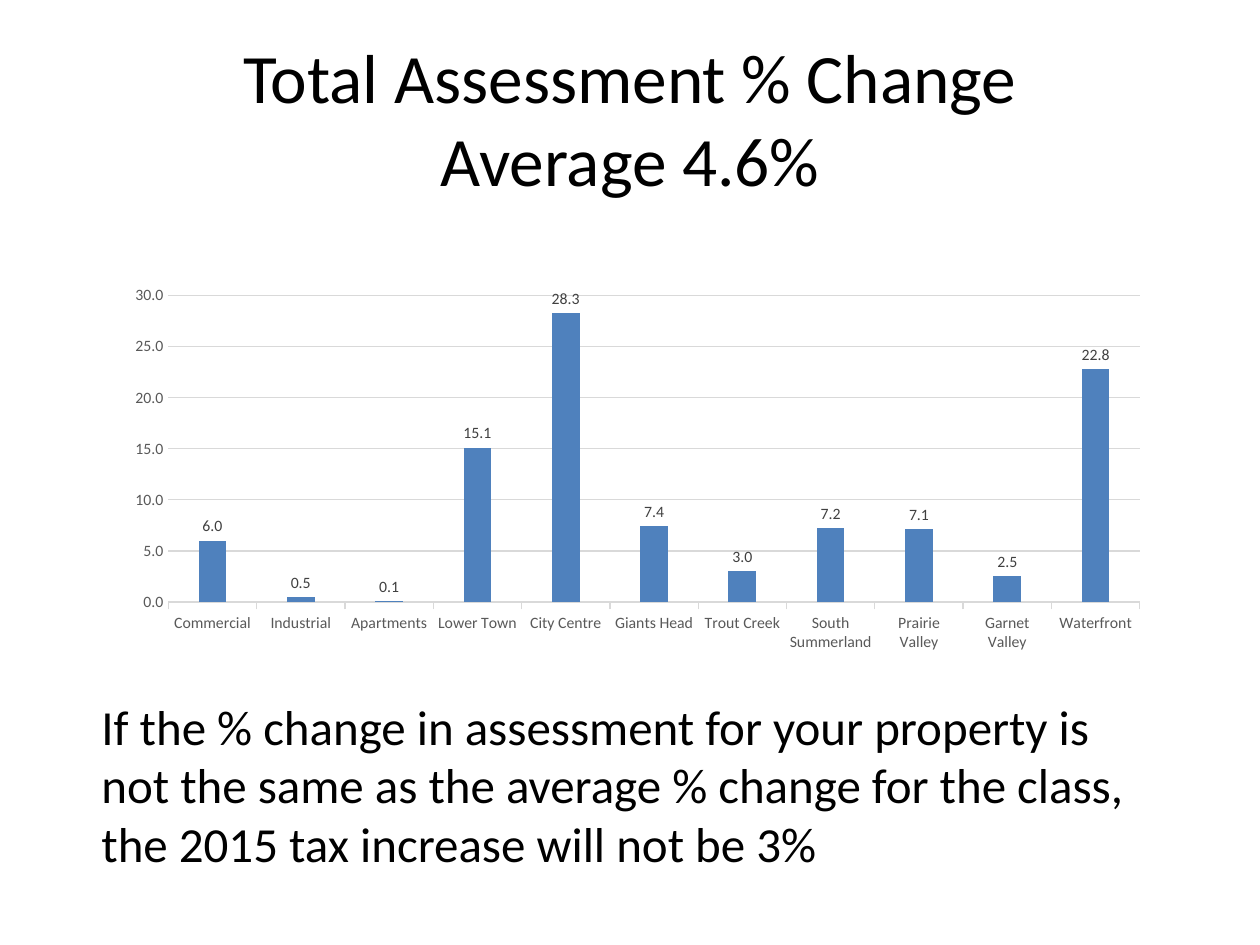
"""Build the assessment change slide with its column chart."""
from dataclasses import dataclass

from lxml import etree
from pptx import Presentation
from pptx.chart.data import CategoryChartData
from pptx.dml.color import RGBColor
from pptx.enum.chart import XL_CHART_TYPE, XL_LABEL_POSITION, XL_TICK_MARK
from pptx.enum.text import MSO_ANCHOR, MSO_AUTO_SIZE, PP_ALIGN
from pptx.oxml import parse_xml
from pptx.util import Pt

COLUMN = XL_CHART_TYPE.COLUMN_CLUSTERED
OUTSIDE_END = XL_LABEL_POSITION.OUTSIDE_END
TICK_NONE, TICK_OUT = XL_TICK_MARK.NONE, XL_TICK_MARK.OUTSIDE
CENTER, MIDDLE, TOP = PP_ALIGN.CENTER, MSO_ANCHOR.MIDDLE, MSO_ANCHOR.TOP
LEFT, NO_FIT = PP_ALIGN.LEFT, MSO_AUTO_SIZE.NONE

TITLE = "Total Assessment % Change\vAverage 4.6%"
NOTE = (
    "If the % change in assessment for your property is not the same as "
    "the average % change for the class, the 2015 tax increase will not be 3%"
)
CHANGES = {
    "Commercial": 6.0,
    "Industrial": 0.5,
    "Apartments": 0.1,
    "Lower Town": 15.1,
    "City Centre": 28.3,
    "Giants Head": 7.4,
    "Trout Creek": 3.0,
    "South Summerland": 7.2,
    "Prairie Valley": 7.1,
    "Garnet Valley": 2.5,
    "Waterfront": 22.8,
}
NUMBER_FORMAT = "#,##0.0"

EMU_PER_PX = 914400 // 126
SLIDE_SIZE = (1260, 945)
TITLE_BOX = (63, 38, 1134, 158)
CHART_BOX = (54, 218, 1143, 433)
NOTE_BOX = (89, 690, 1081, 190)
PLOT_AREA = {"x": 0.1, "y": 0.18, "w": 0.85, "h": 0.71}


@dataclass(frozen=True)
class Theme:
    font: str = "Calibri"
    text: str = "000000"
    axis: str = "595959"
    label: str = "404040"
    line: str = "D9D9D9"
    column: str = "4F81BD"
    title_size: float = 39.6
    note_size: float = 28
    chart_size: float = 10
    label_size: float = 9
    line_width: float = 0.75


THEME = Theme()


def to_emu(lengths):
    return [length * EMU_PER_PX for length in lengths]


def style_font(font, size, color):
    font.name = THEME.font
    font.size = Pt(size)
    font.color.rgb = RGBColor.from_string(color)


def style_line(line):
    line.color.rgb = RGBColor.from_string(THEME.line)
    line.width = Pt(THEME.line_width)


def fill_text(shape, text, size, alignment, anchor):
    frame = shape.text_frame
    frame.word_wrap = True
    frame.auto_size = NO_FIT
    frame.vertical_anchor = anchor
    frame.text = text
    paragraph = frame.paragraphs[0]
    paragraph.alignment = alignment
    style_font(paragraph.font, size, THEME.text)


def set_plot_layout(chart):
    plot_area = chart._chartSpace.chart.plotArea
    for layout in plot_area.xpath("c:layout"):
        plot_area.remove(layout)
    layout = parse_xml(
        '<c:layout xmlns:c="http://schemas.openxmlformats.org/drawingml/2006/chart">'
        "<c:manualLayout/></c:layout>"
    )
    settings = {"layoutTarget": "inner", "xMode": "edge", "yMode": "edge", **PLOT_AREA}
    namespace = etree.QName(layout).namespace
    for name, value in settings.items():
        etree.SubElement(layout[0], f"{{{namespace}}}{name}").set("val", str(value))
    plot_area.insert(0, layout)


def add_change_chart(slide):
    data = CategoryChartData(number_format=NUMBER_FORMAT)
    data.categories = list(CHANGES)
    data.add_series("Series 1", list(CHANGES.values()))
    chart = slide.shapes.add_chart(COLUMN, *to_emu(CHART_BOX), data).chart
    chart.has_legend = False
    chart.has_title = False
    style_font(chart.font, THEME.chart_size, THEME.text)
    set_plot_layout(chart)

    category_axis, value_axis = chart.category_axis, chart.value_axis
    for axis, tick in ((category_axis, TICK_OUT), (value_axis, TICK_NONE)):
        axis.major_tick_mark = tick
        axis.minor_tick_mark = TICK_NONE
        style_font(axis.tick_labels.font, THEME.label_size, THEME.axis)
    style_line(category_axis.format.line)
    value_axis.format.line.fill.background()
    style_line(value_axis.major_gridlines.format.line)
    value_axis.tick_labels.number_format = NUMBER_FORMAT
    value_axis.tick_labels.number_format_is_linked = False

    plot = chart.plots[0]
    plot.vary_by_categories = False
    plot.gap_width = 219
    plot.overlap = -27
    fill = plot.series[0].format.fill
    fill.solid()
    fill.fore_color.rgb = RGBColor.from_string(THEME.column)
    labels = plot.series[0].data_labels
    labels.show_value = True
    labels.position = OUTSIDE_END
    labels.number_format = NUMBER_FORMAT
    labels.number_format_is_linked = False
    style_font(labels.font, THEME.label_size, THEME.label)


def main():
    presentation = Presentation()
    presentation.slide_width, presentation.slide_height = to_emu(SLIDE_SIZE)
    slide = presentation.slides.add_slide(presentation.slide_layouts[5])
    title = slide.shapes.title
    title.left, title.top, title.width, title.height = to_emu(TITLE_BOX)
    fill_text(title, TITLE, THEME.title_size, CENTER, MIDDLE)
    add_change_chart(slide)
    note = slide.shapes.add_textbox(*to_emu(NOTE_BOX))
    fill_text(note, NOTE, THEME.note_size, LEFT, TOP)
    presentation.save("out.pptx")


if __name__ == "__main__":
    main()
